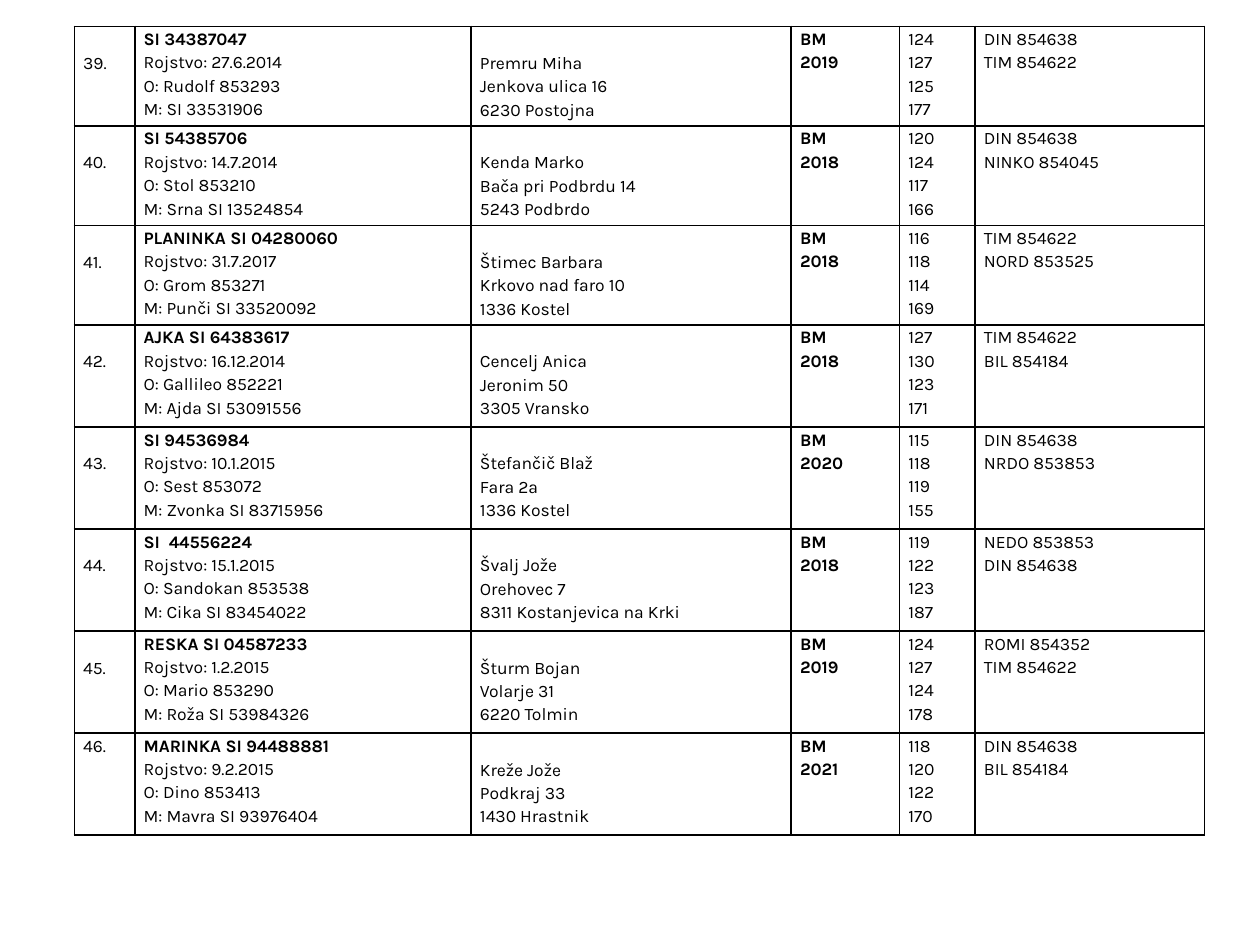
from dataclasses import dataclass

from lxml import etree
from pptx import Presentation
from pptx.dml.color import RGBColor
from pptx.enum.text import PP_ALIGN
from pptx.oxml.ns import qn
from pptx.util import Inches, Pt

JUSTIFY = PP_ALIGN.JUSTIFY
BLANK_LAYOUT = 6


@dataclass(frozen=True)
class Theme:
    font: str = "Karla"
    size: float = 10
    ink: str = "000000"
    border: float = 1
    line_spacing: float = 1.15
    side_margin: float = 0.07
    line_height: float = 0.19


THEME = Theme()
TABLE_LEFT, TABLE_TOP = 0.59, 0.21
COLUMN_WIDTHS = [0.48, 2.67, 2.54, 0.86, 0.6, 1.82]
ROW_HEIGHTS = [0.79] * 3 + [0.81] * 5
FIRST_NUMBER = 39

# animal, birth, sire, dam, owner lines, year, indices, proposed bulls
ANIMALS = [
    ("SI 34387047", "27.6.2014", "Rudolf 853293", "SI 33531906",
     ["Premru Miha", "Jenkova ulica 16", "6230 Postojna"],
     2019, [124, 127, 125, 177], ["DIN 854638", "TIM 854622"]),
    ("SI 54385706", "14.7.2014", "Stol 853210", "Srna SI 13524854",
     ["Kenda Marko", "Bača pri Podbrdu 14", "5243 Podbrdo"],
     2018, [120, 124, 117, 166], ["DIN 854638", "NINKO 854045"]),
    ("PLANINKA SI 04280060", "31.7.2017", "Grom 853271", "Punči SI 33520092",
     ["Štimec Barbara", "Krkovo nad faro 10", "1336 Kostel"],
     2018, [116, 118, 114, 169], ["TIM 854622", "NORD 853525"]),
    ("AJKA SI 64383617", "16.12.2014", "Gallileo 852221", "Ajda SI 53091556",
     ["Cencelj Anica", "Jeronim 50", "3305 Vransko"],
     2018, [127, 130, 123, 171], ["TIM 854622", "BIL 854184"]),
    ("SI 94536984", "10.1.2015", "Sest 853072", "Zvonka SI 83715956",
     ["Štefančič Blaž", "Fara 2a", "1336 Kostel"],
     2020, [115, 118, 119, 155], ["DIN 854638", "NRDO 853853"]),
    ("SI  44556224", "15.1.2015", "Sandokan 853538", "Cika SI 83454022",
     ["Švalj Jože", "Orehovec 7", "8311 Kostanjevica na Krki"],
     2018, [119, 122, 123, 187], ["NEDO 853853", "DIN 854638"]),
    ("RESKA SI 04587233", "1.2.2015", "Mario 853290", "Roža SI 53984326",
     ["Šturm Bojan", "Volarje 31", "6220 Tolmin"],
     2019, [124, 127, 124, 178], ["ROMI 854352", "TIM 854622"]),
    ("MARINKA SI 94488881", "9.2.2015", "Dino 853413", "Mavra SI 93976404",
     ["Kreže Jože", "Podkraj 33", "1430 Hrastnik"],
     2021, [118, 120, 122, 170], ["DIN 854638", "BIL 854184"]),
]


def add_grid(page):
    frame = page.shapes.add_table(
        len(ROW_HEIGHTS), len(COLUMN_WIDTHS), Inches(TABLE_LEFT), Inches(TABLE_TOP),
        Inches(sum(COLUMN_WIDTHS)), Inches(sum(ROW_HEIGHTS)))
    table = frame.table
    table.first_row = False
    table.horz_banding = False
    for column, width in zip(table.columns, COLUMN_WIDTHS):
        column.width = Inches(width)
    for row, height in zip(table.rows, ROW_HEIGHTS):
        row.height = Inches(height)
    return table


def set_borders(cell):
    """Outline all four sides; the lines must precede the fill in tcPr."""
    properties = cell._tc.get_or_add_tcPr()
    for index, side in enumerate(("a:lnL", "a:lnR", "a:lnT", "a:lnB")):
        line = etree.Element(qn(side), w=str(Pt(THEME.border)))
        fill = etree.SubElement(line, qn("a:solidFill"))
        etree.SubElement(fill, qn("a:srgbClr"), val=THEME.ink)
        properties.insert(index, line)


def fill_cell(cell, lines, bold_lines=0, skipped_lines=0):
    """Write one paragraph per line, starting skipped_lines below the top."""
    cell.margin_left = cell.margin_right = Inches(THEME.side_margin)
    cell.margin_top = Inches(skipped_lines * THEME.line_height)
    cell.margin_bottom = 0
    cell.fill.background()
    set_borders(cell)
    cell.text_frame.text = "\n".join(str(line) for line in lines)
    for index, para in enumerate(cell.text_frame.paragraphs):
        para.alignment = JUSTIFY
        para.line_spacing = THEME.line_spacing
        para.font.name = THEME.font
        para.font.size = Pt(THEME.size)
        para.font.bold = index < bold_lines
        para.font.color.rgb = RGBColor.from_string(THEME.ink)


def fill_row(cells, number, animal, number_offset):
    name, birth, sire, dam, owner, year, indices, bulls = animal
    number_cell, animal_cell, owner_cell, year_cell, index_cell, bull_cell = cells
    fill_cell(number_cell, [f"{number}."], skipped_lines=number_offset)
    fill_cell(animal_cell, [name, f"Rojstvo: {birth}", f"O: {sire}", f"M: {dam}"],
              bold_lines=1)
    fill_cell(owner_cell, owner, skipped_lines=1)
    fill_cell(year_cell, ["BM", year], bold_lines=2)
    fill_cell(index_cell, indices)
    fill_cell(bull_cell, bulls)


def main():
    deck = Presentation()
    deck.slide_width, deck.slide_height = Inches(10), Inches(7.5)
    page = deck.slides.add_slide(deck.slide_layouts[BLANK_LAYOUT])
    table = add_grid(page)
    for index, (row, animal) in enumerate(zip(table.rows, ANIMALS)):
        is_last = index == len(ANIMALS) - 1
        fill_row(row.cells, FIRST_NUMBER + index, animal, 0 if is_last else 1)
    deck.save("out.pptx")


if __name__ == "__main__":
    main()
